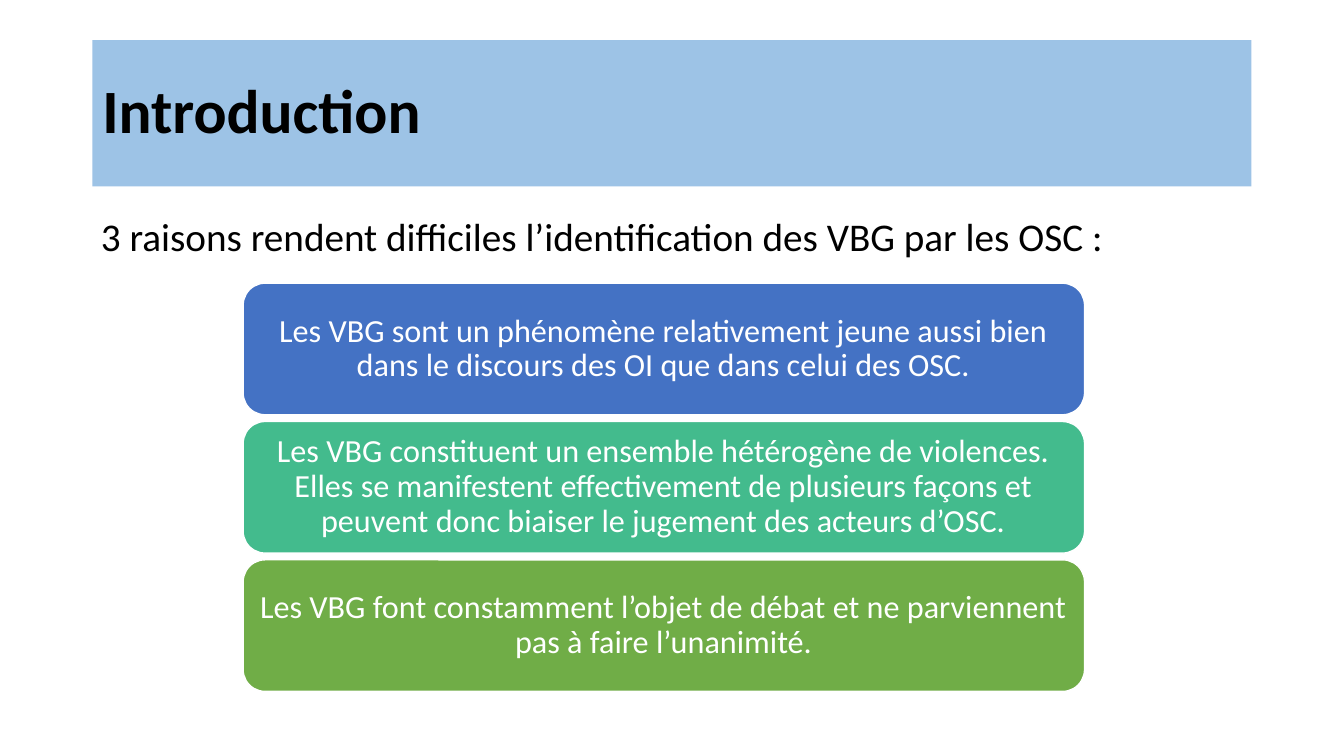
from pptx import Presentation
from pptx.dml.color import RGBColor
from pptx.enum.shapes import MSO_SHAPE
from pptx.enum.text import MSO_ANCHOR, PP_ALIGN
from pptx.util import Pt

BLACK = RGBColor(0x00, 0x00, 0x00)
WHITE = RGBColor(0xFF, 0xFF, 0xFF)
SKY = RGBColor(0x9D, 0xC3, 0xE6)
BLUE = RGBColor(0x44, 0x72, 0xC4)
TEAL = RGBColor(0x43, 0xBB, 0x8D)
GREEN = RGBColor(0x70, 0xAD, 0x47)

REASONS = [
    (BLUE, "Les VBG sont un phénomène relativement jeune aussi bien dans le discours "
           "des OI que dans celui des OSC."),
    (TEAL, "Les VBG constituent un ensemble hétérogène de violences. Elles se manifestent "
           "effectivement de plusieurs façons et peuvent donc biaiser le jugement des "
           "acteurs d’OSC."),
    (GREEN, "Les VBG font constamment l’objet de débat et ne parviennent pas à faire "
            "l’unanimité."),
]
REASON_TOP = 202.3
REASON_STEP = 98.8


def set_all(target, values):
    for name, value in values.items():
        setattr(target, name, value)


def write(box, text, size, color, bold=False, align=PP_ALIGN.LEFT,
          anchor=MSO_ANCHOR.MIDDLE, side=7.2):
    frame = box.text_frame
    set_all(frame, {"word_wrap": True, "vertical_anchor": anchor,
                    "margin_left": Pt(side), "margin_right": Pt(side),
                    "margin_top": Pt(3.6), "margin_bottom": Pt(3.6)})
    para = frame.paragraphs[0]
    set_all(para, {"alignment": align, "line_spacing": 0.9})
    span = para.add_run()
    span.text = text
    set_all(span.font, {"name": "Calibri", "size": Pt(size), "bold": bold})
    span.font.color.rgb = color


def add_block(page, kind, left, top, width, height, fill):
    block = page.shapes.add_shape(kind, Pt(left), Pt(top), Pt(width), Pt(height))
    block.shadow.inherit = False
    block.fill.solid()
    block.fill.fore_color.rgb = fill
    block.line.fill.background()
    return block


def add_title(page, text):
    banner = add_block(page, MSO_SHAPE.RECTANGLE, 66, 28.75, 828, 104.4, SKY)
    write(banner, text, 44, BLACK, bold=True)


def add_lead(page, text):
    box = page.shapes.add_textbox(Pt(65), Pt(152), Pt(828), Pt(44))
    write(box, text, 28, BLACK, anchor=MSO_ANCHOR.TOP)


def add_reason(page, index, fill, text):
    top = REASON_TOP + index * REASON_STEP
    card = add_block(page, MSO_SHAPE.ROUNDED_RECTANGLE, 173.7, top, 601, 94, fill)
    card.line.color.rgb = WHITE
    card.line.width = Pt(1)
    write(card, text, 23, WHITE, align=PP_ALIGN.CENTER, side=2.6)


def main():
    deck = Presentation()
    set_all(deck, {"slide_width": Pt(960), "slide_height": Pt(540)})
    page = deck.slides.add_slide(deck.slide_layouts[6])
    add_title(page, "Introduction")
    add_lead(page, "3 raisons rendent difficiles l’identification des VBG par les OSC :")
    for index, (fill, text) in enumerate(REASONS):
        add_reason(page, index, fill, text)
    deck.save("out.pptx")


if __name__ == "__main__":
    main()
